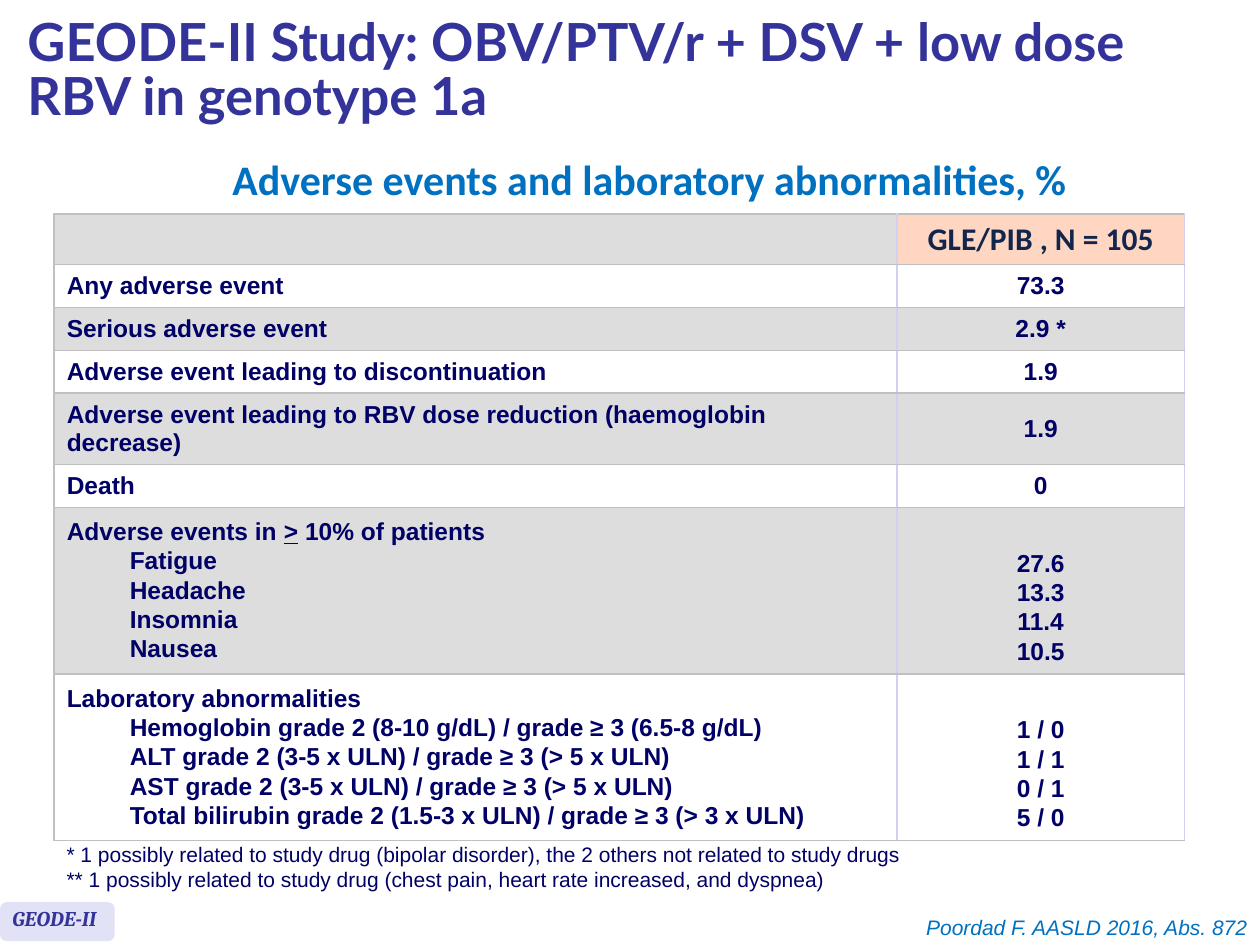
from lxml.etree import SubElement
from pptx import Presentation
from pptx.dml.color import RGBColor
from pptx.enum.shapes import MSO_SHAPE
from pptx.enum.text import MSO_ANCHOR, PP_ALIGN
from pptx.oxml.ns import qn
from pptx.util import Inches, Pt

NAVY, INDIGO, BLUE = "000066", "333399", "0070C0"
WHITE, GREY, PEACH = "FFFFFF", "DDDDDD", "FFD6C2"
RULE, DIVIDER = "C0C0C0", "D0D0F0"

BODY = dict(name="Arial", size=Pt(14), bold=True, color=NAVY)
HEADER = dict(name="Calibri", size=Pt(18), bold=True, color="12254C")
TITLE = dict(name="Lato", size=Pt(30), bold=True, color=INDIGO)
SUBTITLE = dict(name="Calibri", size=Pt(24), bold=True, color=BLUE)
NOTE = dict(name="Arial", size=Pt(12), color=NAVY)
TAG = dict(name="Cambria", size=Pt(12), bold=True, italic=True, color=INDIGO)
SOURCE = dict(name="Arial", size=Pt(12), italic=True, color=BLUE)

# Each row: label lines (the first is the heading), value lines.
ROWS = [
    (["Any adverse event"], ["73.3"]),
    (["Serious adverse event"], ["2.9 *"]),
    (["Adverse event leading to discontinuation"], ["1.9"]),
    (["Adverse event leading to RBV dose reduction (haemoglobin decrease)"],
     ["1.9"]),
    (["Death"], ["0"]),
    ([["Adverse events in ", ">", " 10% of patients"],
      "Fatigue", "Headache", "Insomnia", "Nausea"],
     ["27.6", "13.3", "11.4", "10.5"]),
    (["Laboratory abnormalities",
      "Hemoglobin grade 2 (8-10 g/dL) / grade ≥ 3 (6.5-8 g/dL)",
      "ALT grade 2 (3-5 x ULN) / grade ≥ 3 (> 5 x ULN)",
      "AST grade 2 (3-5 x ULN) / grade ≥ 3 (> 5 x ULN)",
      "Total bilirubin grade 2 (1.5-3 x ULN) / grade ≥ 3 (> 3 x ULN)"],
     ["1 / 0", "1 / 1", "0 / 1", "5 / 0"]),
]


def rgb(hex_color):
    return RGBColor.from_string(hex_color)


def set_font(font, style):
    for key, value in style.items():
        if key == "color":
            font.color.rgb = rgb(value)
        else:
            setattr(font, key, value)


def write(tf, lines, style, align=PP_ALIGN.LEFT, gap=0, indent=0):
    """Write one paragraph per line; a list is split in runs, odd ones underlined."""
    for i, line in enumerate(lines):
        p = tf.paragraphs[0] if i == 0 else tf.add_paragraph()
        p.alignment = align
        if i:
            p.space_before = Pt(gap)
            if indent:
                pPr = p._p.get_or_add_pPr()
                pPr.set("marL", str(Inches(indent)))
                pPr.set("indent", "0")
        for j, text in enumerate([line] if isinstance(line, str) else line):
            r = p.add_run()
            r.text = text
            set_font(r.font, style)
            if j % 2:
                r.font.underline = True


def add_text(s, box, lines, style, align=PP_ALIGN.LEFT, spacing=None,
             anchor=MSO_ANCHOR.TOP):
    tf = s.shapes.add_textbox(*map(Inches, box)).text_frame
    tf.word_wrap = True
    tf.vertical_anchor = anchor
    write(tf, lines, style, align)
    if spacing:
        for p in tf.paragraphs:
            p.line_spacing = spacing


def set_borders(cell, **colors):
    tcPr = cell._tc.get_or_add_tcPr()
    for side in "LRTB":
        ln = SubElement(tcPr, qn(f"a:ln{side}"), w=str(Pt(1)))
        fill = SubElement(ln, qn("a:solidFill"))
        SubElement(fill, qn("a:srgbClr"), val=colors.get(side, RULE))


def format_cell(cell, fill, left):
    set_borders(cell, L=left, R=DIVIDER)
    cell.fill.solid()
    cell.fill.fore_color.rgb = rgb(fill)
    cell.vertical_anchor = MSO_ANCHOR.MIDDLE


def add_events_table(s):
    frame = s.shapes.add_table(len(ROWS) + 1, 2, Inches(0.43), Inches(1.7),
                               Inches(8.97), Inches(4.74))
    table = frame.table
    for column, width in zip(table.columns, (6.69, 2.28)):
        column.width = Inches(width)
    table.rows[0].height = Inches(0.4)
    format_cell(table.cell(0, 0), GREY, RULE)
    head = table.cell(0, 1)
    format_cell(head, PEACH, DIVIDER)
    write(head.text_frame, ["GLE/PIB , N = 105"], HEADER, PP_ALIGN.CENTER)

    for i, (labels, values) in enumerate(ROWS, start=1):
        table.rows[i].height = Inches(1.32 if len(labels) > 1 else 0.34)
        fill = WHITE if i % 2 else GREY
        label, value = table.cell(i, 0), table.cell(i, 1)
        format_cell(label, fill, RULE)
        format_cell(value, fill, DIVIDER)
        write(label.text_frame, labels, BODY, gap=1, indent=0.5)
        write(value.text_frame, values, BODY, PP_ALIGN.CENTER, gap=1)
        if len(labels) > 1:  # values line up with the indented labels
            value.vertical_anchor = MSO_ANCHOR.BOTTOM
            value.margin_bottom = Inches(0.07)


def add_study_tag(s):
    sp = s.shapes.add_shape(MSO_SHAPE.ROUNDED_RECTANGLE, Inches(0),
                            Inches(7.16), Inches(0.91), Inches(0.31))
    sp.shadow.inherit = False
    sp.fill.solid()
    sp.fill.fore_color.rgb = rgb("E2E2F6")
    sp.line.fill.background()
    add_text(s, (0, 7.14, 0.91, 0.3), ["GEODE-II"], TAG)


def main():
    prs = Presentation()
    prs.slide_width, prs.slide_height = Inches(10), Inches(7.5)
    s = prs.slides.add_slide(prs.slide_layouts[6])
    add_text(s, (0.12, 0.08, 9.53, 0.99),
             ["GEODE-II Study: OBV/PTV/r + DSV + low dose RBV in genotype 1a"],
             TITLE, spacing=0.85, anchor=MSO_ANCHOR.MIDDLE)
    add_text(s, (0.43, 1.36, 9.45, 0.35),
             ["Adverse events and laboratory abnormalities, %"],
             SUBTITLE, PP_ALIGN.CENTER, spacing=Pt(15.2))
    add_events_table(s)
    add_text(s, (0.43, 6.63, 8.66, 0.5),
             ["* 1 possibly related to study drug (bipolar disorder), "
              "the 2 others not related to study drugs",
              "** 1 possibly related to study drug "
              "(chest pain, heart rate increased, and dyspnea)"], NOTE)
    add_study_tag(s)
    add_text(s, (2.64, 7.21, 7.36, 0.3), ["Poordad F. AASLD 2016, Abs. 872"],
             SOURCE, PP_ALIGN.RIGHT)
    prs.save("out.pptx")


if __name__ == "__main__":
    main()
